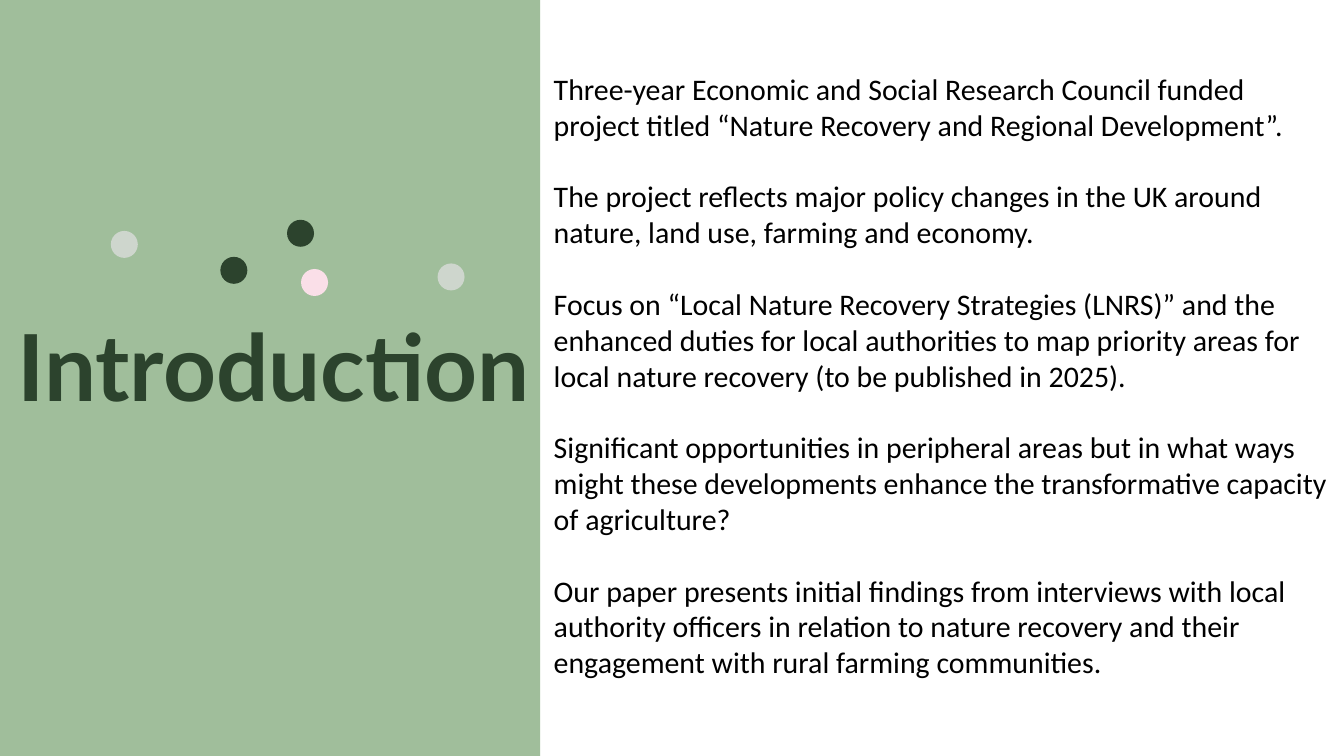
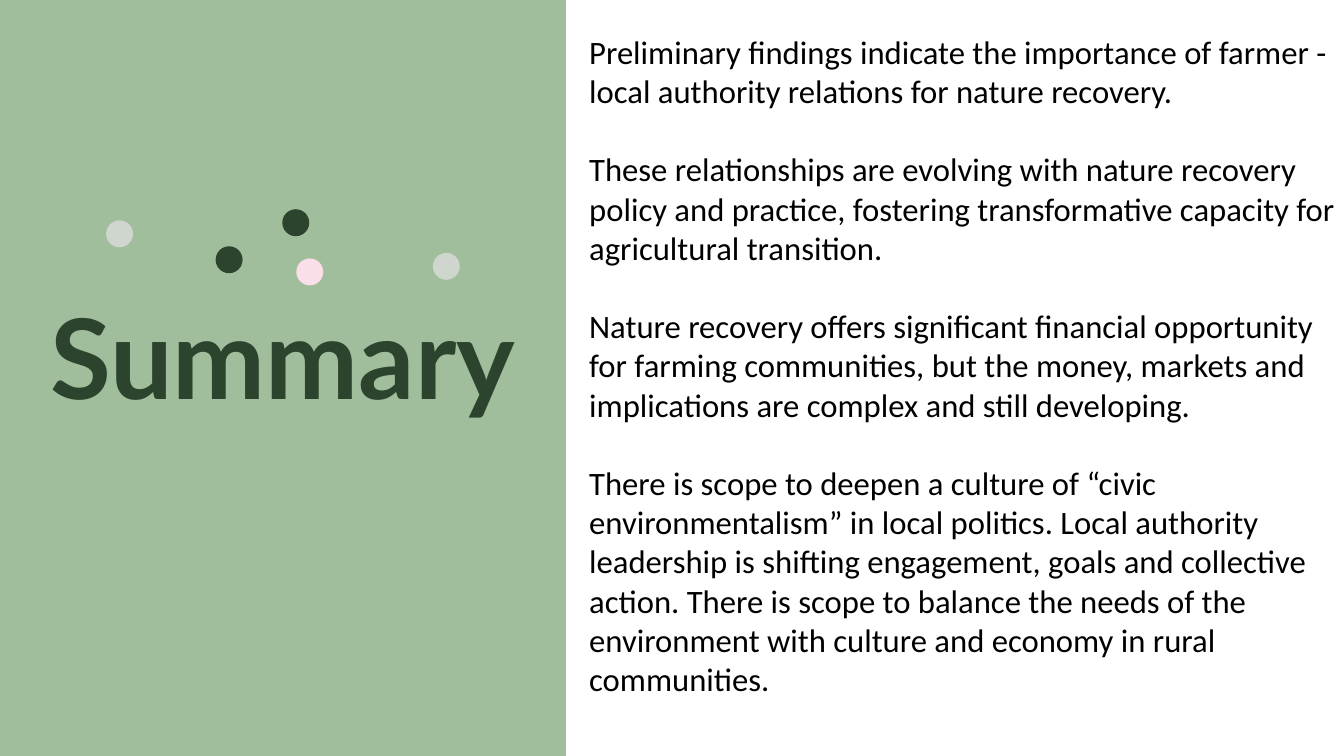
from dataclasses import dataclass

from lxml import etree
from pptx import Presentation
from pptx.dml.color import RGBColor
from pptx.enum.shapes import MSO_SHAPE
from pptx.enum.text import MSO_AUTO_SIZE, PP_ALIGN
from pptx.oxml.ns import qn
from pptx.util import Cm, Pt

RECTANGLE, OVAL = MSO_SHAPE.RECTANGLE, MSO_SHAPE.OVAL
LEFT, CENTER = PP_ALIGN.LEFT, PP_ALIGN.CENTER
GROW = MSO_AUTO_SIZE.SHAPE_TO_FIT_TEXT


@dataclass(frozen=True)
class Theme:
    sage: str = "99BA94"
    forest: str = "2C432D"
    mist: str = "CED6CD"
    blush: str = "FADFE8"
    ink: str = "000000"
    title_font: str = "Lato"
    body_font: str = "Calibri"
    intro_title: int = 99
    summary_title: int = 119
    title_leading: int = 99
    intro_body: int = 32
    summary_body: int = 35
    body_line: float = 1.2
    panel_opacity: int = 93


THEME = Theme()
SLIDE_WIDTH, SLIDE_HEIGHT = 50.8, 28.58
DOT_SIZE = 1.02

# Dots: offset from the cluster's corner and colour
DOTS = [
    (12.35, 1.65, THEME.mist),
    (6.66, 0, THEME.forest),
    (7.19, 1.86, THEME.blush),
    (4.14, 1.4, THEME.forest),
    (0, 0.42, THEME.mist),
]

# Content of each slide; boxes are left, top, width, height in cm
SECTIONS = [
    dict(
        title="Introduction", title_box=(0.66, 12.4, 20.42, 3.53),
        title_size=THEME.intro_title, title_align=LEFT,
        panel_width=20.42, dots_at=(4.19, 8.31),
        body_box=(20.68, 2.54, 30.12, 23.52), body_size=THEME.intro_body,
        body=[
            "Three-year Economic and Social Research Council funded project titled "
            "“Nature Recovery and Regional Development”.",
            "The project reflects major policy changes in the UK around nature, "
            "land use, farming and economy.",
            "Focus on “Local Nature Recovery Strategies (LNRS)” and the enhanced "
            "duties for local authorities to map priority areas for local nature "
            "recovery (to be published in 2025).",
            "Significant opportunities in peripheral areas but in what ways might "
            "these developments enhance the transformative capacity of agriculture?",
            "Our paper presents initial findings from interviews with local "
            "authority officers in relation to nature recovery and their engagement "
            "with rural farming communities.",
        ],
    ),
    dict(
        title="Summary", title_box=(-1.37, 12.45, 24.13, 3.71),
        title_size=THEME.summary_title, title_align=CENTER,
        panel_width=21.39, dots_at=(4.01, 7.91),
        body_box=(22.02, 1.07, 28.78, 26.42), body_size=THEME.summary_body,
        body=[
            "Preliminary findings indicate the importance of farmer - local "
            "authority relations for nature recovery.",
            "These relationships are evolving with nature recovery policy and "
            "practice, fostering transformative capacity for agricultural transition.",
            "Nature recovery offers significant financial opportunity for farming "
            "communities, but the money, markets and implications are complex and "
            "still developing.",
            "There is scope to deepen a culture of “civic environmentalism” in local "
            "politics. Local authority leadership is shifting engagement, goals and "
            "collective action. There is scope to balance the needs of the "
            "environment with culture and economy in rural communities.",
        ],
    ),
]


def add_text(slide, paragraphs, box, *, size, font, color, bold=False,
             align=LEFT, leading=None, gap=0, inset=None):
    frame = slide.shapes.add_textbox(*map(Cm, box)).text_frame
    frame.word_wrap = True
    frame.auto_size = GROW
    if inset is not None:
        frame.margin_left = frame.margin_right = Cm(inset)
        frame.margin_top = frame.margin_bottom = Cm(inset)
    for index, text in enumerate(paragraphs):
        paragraph = frame.add_paragraph() if index else frame.paragraphs[0]
        paragraph.alignment = align
        if leading:
            paragraph.line_spacing = Pt(leading)
        if index and gap:
            paragraph.space_before = Pt(gap)
        run = paragraph.add_run()
        run.text = text
        run.font.size, run.font.name, run.font.bold = Pt(size), font, bold
        run.font.color.rgb = RGBColor.from_string(color)


def add_filled(slide, preset, box, color, opacity=100):
    shape = slide.shapes.add_shape(preset, *map(Cm, box))
    shape.shadow.inherit = False
    shape.line.fill.background()
    shape.fill.solid()
    shape.fill.fore_color.rgb = RGBColor.from_string(color)
    if opacity < 100:
        tint = shape.fill._xPr.find(".//" + qn("a:srgbClr"))
        etree.SubElement(tint, qn("a:alpha"), val=str(opacity * 1000))


deck = Presentation()
deck.slide_width, deck.slide_height = Cm(SLIDE_WIDTH), Cm(SLIDE_HEIGHT)
blank_layout = deck.slide_layouts[6]

for section in SECTIONS:
    slide = deck.slides.add_slide(blank_layout)

    # Side panel
    add_filled(slide, RECTANGLE, (0, 0, section["panel_width"], SLIDE_HEIGHT),
               THEME.sage, THEME.panel_opacity)

    # Dot cluster above the title
    cluster_left, cluster_top = section["dots_at"]
    for across, down, color in DOTS:
        add_filled(slide, OVAL, (cluster_left + across, cluster_top + down,
                                 DOT_SIZE, DOT_SIZE), color)

    # Title
    add_text(slide, [section["title"]], section["title_box"],
             size=section["title_size"], font=THEME.title_font,
             color=THEME.forest, bold=True, align=section["title_align"],
             leading=THEME.title_leading, inset=0)

    # Body text, one empty line's height between paragraphs
    add_text(slide, section["body"], section["body_box"],
             size=section["body_size"], font=THEME.body_font, color=THEME.ink,
             gap=section["body_size"] * THEME.body_line)

deck.save("out.pptx")
